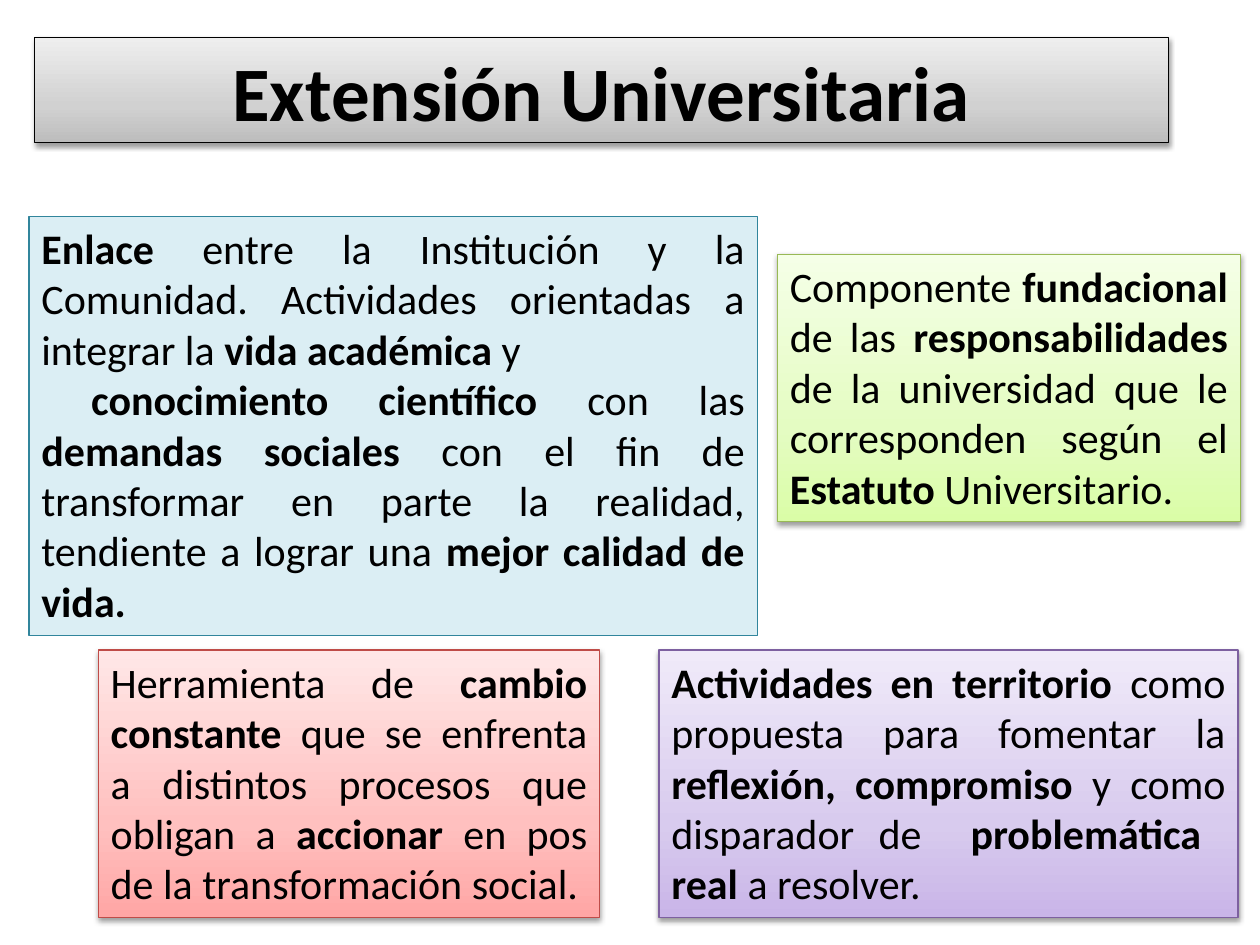
from lxml.etree import SubElement
from pptx import Presentation
from pptx.dml.color import RGBColor
from pptx.enum.text import MSO_ANCHOR, MSO_AUTO_SIZE, PP_ALIGN
from pptx.oxml.ns import qn
from pptx.util import Inches, Pt

THEME = {
    "font": "Calibri", "text": "000000", "title_size": 44, "body_size": 24,
    # Fill colours run from the bottom edge to the top edge.
    "gray": (["BDBDBD", "D1D1D1", "EEEEEE"], "000000"),
    "green": (["DAFDA7", "E4FCC2", "F5FFE7"], "98B955"),
    "red": (["FFA6A5", "FFC0BF", "FFE7E7"], "BF4C48"),
    "purple": (["C9B5E8", "D8CBEE", "F0EAF9"], "7D60A0"),
    "blue": (["DBEEF4"], "31859C"),
}
STOPS = (0, 35, 100)

deck = Presentation()
deck.slide_width, deck.slide_height = Inches(10), Inches(7.5)
page = deck.slides.add_slide(deck.slide_layouts.get_by_name("Title Only"))


def style_box(box, area, colors):
    """Place a box by percentages of the slide; a gradient fill brings a shadow."""
    left, top, width, height = area
    box.left, box.width = (int(deck.slide_width * x / 100) for x in (left, width))
    box.top, box.height = (int(deck.slide_height * y / 100) for y in (top, height))
    fills, edge = colors
    properties = box._element.spPr
    if len(fills) == 1:
        box.fill.solid()
        box.fill.fore_color.rgb = RGBColor.from_string(fills[0])
    else:
        box.fill.background()
        properties.remove(properties.find(qn("a:noFill")))
        gradient = SubElement(properties, qn("a:gradFill"), rotWithShape="1")
        stops = SubElement(gradient, qn("a:gsLst"))
        for share, color in zip(STOPS, fills):
            stop = SubElement(stops, qn("a:gs"), pos=str(share * 1000))
            SubElement(stop, qn("a:srgbClr"), val=color)
        SubElement(gradient, qn("a:lin"), ang=str(270 * 60000), scaled="0")
        effects = SubElement(properties, qn("a:effectLst"))
        shadow = SubElement(effects, qn("a:outerShdw"), blurRad="40000", dist="20000",
                            dir=str(90 * 60000), rotWithShape="0")
        shade = SubElement(shadow, qn("a:srgbClr"), val="000000")
        SubElement(shade, qn("a:alpha"), val="38000")
    box.line.color.rgb = RGBColor.from_string(edge)
    box.line.width = Pt(0.75)


def write(para, text, size, align):
    """Fill a paragraph; text between pairs of ** is bold."""
    para.alignment = align
    for index, part in enumerate(text.split("**")):
        if part:
            span = para.add_run()
            span.text = part
            span.font.name, span.font.size = THEME["font"], Pt(size)
            span.font.bold = index % 2 == 1
            span.font.color.rgb = RGBColor.from_string(THEME["text"])


title = page.shapes.title
style_box(title, (2.75, 4, 90, 11.1), THEME["gray"])
title.text_frame.auto_size = MSO_AUTO_SIZE.NONE
title.text_frame.vertical_anchor = MSO_ANCHOR.MIDDLE
write(title.text_frame.paragraphs[0], "**Extensión Universitaria**",
      THEME["title_size"], PP_ALIGN.CENTER)

statements = [
    ("green", (61.7, 26.9, 36.75, 28.27), [
        "Componente **fundacional **de las **responsabilidades** de la universidad "
        "que le corresponden según el **Estatuto **Universitario."]),
    ("red", (7.8, 68.8, 39.8, 28.27), [
        "Herramienta de **cambio constante** que se enfrenta a distintos procesos "
        "que obligan a **accionar** en pos de la transformación social."]),
    ("purple", (52.3, 68.8, 45.95, 28.27), [
        "**Actividades en territorio **como propuesta para fomentar la **reflexión, "
        "compromiso **y como disparador de  **problemática  real **a resolver."]),
    ("blue", (2.3, 22.9, 57.8, 44.4), [
        "**Enlace **entre la Institución y la Comunidad. Actividades orientadas a "
        "integrar la **vida académica** y",
        " **conocimiento científico **con las **demandas sociales **con el fin de "
        "transformar en parte la realidad, tendiente a lograr una "
        "**mejor calidad de vida.**"]),
]
for color, area, texts in statements:
    box = page.shapes.add_textbox(0, 0, 0, 0)
    style_box(box, area, THEME[color])
    frame = box.text_frame
    frame.word_wrap = True
    frame.auto_size = MSO_AUTO_SIZE.SHAPE_TO_FIT_TEXT
    for index, text in enumerate(texts):
        para = frame.add_paragraph() if index else frame.paragraphs[0]
        write(para, text, THEME["body_size"], PP_ALIGN.JUSTIFY)

deck.save("out.pptx")
